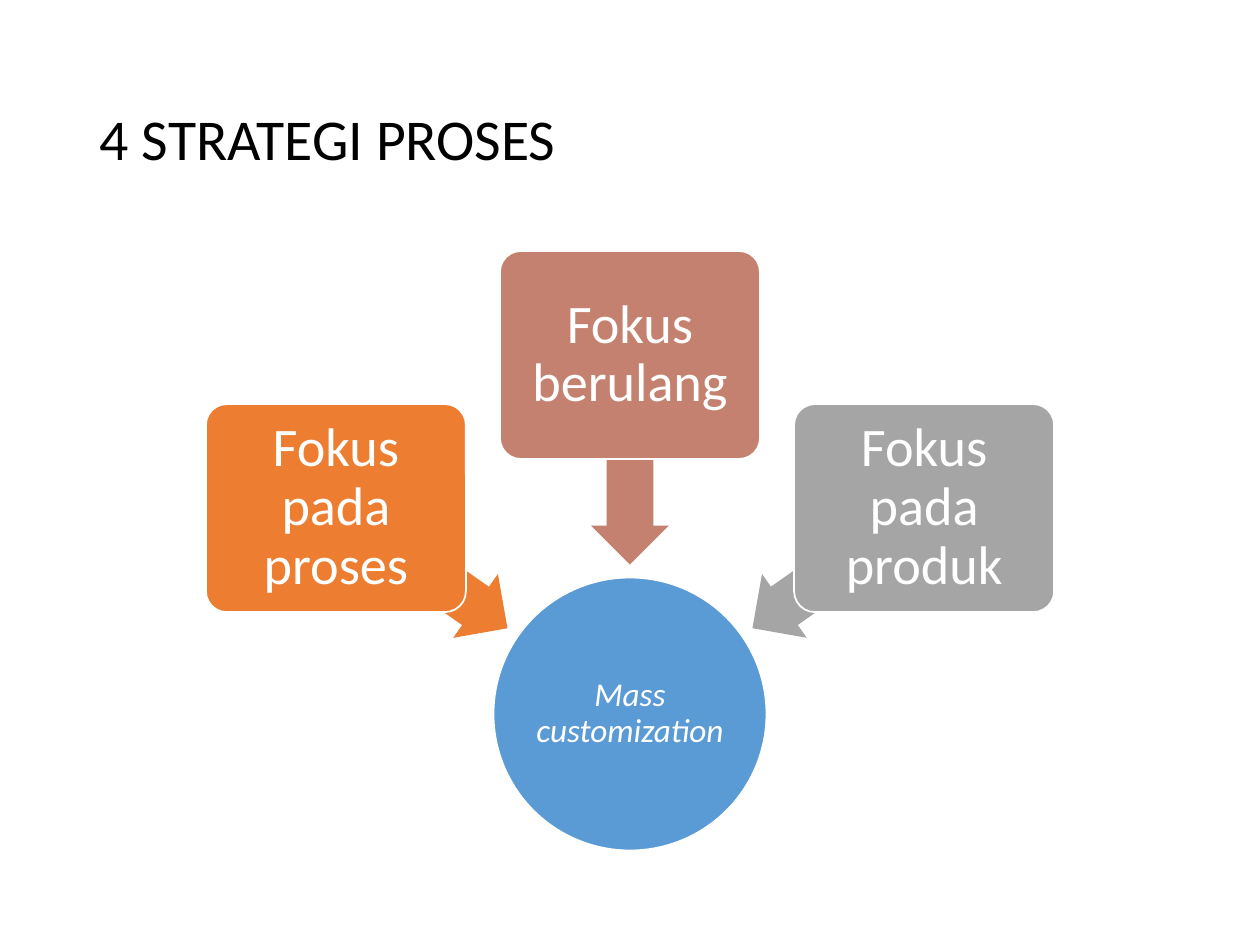
from math import cos, radians, sin

from pptx import Presentation
from pptx.dml.color import RGBColor
from pptx.enum.shapes import MSO_SHAPE
from pptx.enum.text import MSO_ANCHOR, PP_ALIGN
from pptx.util import Pt

BLACK = RGBColor(0x00, 0x00, 0x00)
WHITE = RGBColor(0xFF, 0xFF, 0xFF)
BLUE = RGBColor(0x5B, 0x9B, 0xD5)
ORANGE = RGBColor(0xED, 0x7D, 0x31)
ROSE = RGBColor(0xC4, 0x81, 0x70)
GREY = RGBColor(0xA5, 0xA5, 0xA5)
FONT = "Calibri"

# Content: each focus sits around the hub at an angle, clockwise from the right
TITLE = "4 STRATEGI PROSES"
HUB = "Mass customization"
FOCUSES = [
    ("Fokus pada proses", ORANGE, 215),
    ("Fokus berulang", ROSE, 270),
    ("Fokus pada produk", GREY, 325),
]

# Layout in px
SLIDE_SIZE = (1260, 945)
TITLE_BOX = (87, 50, 1086, 183)
HUB_CENTRE = (630, 714)
HUB_SIZE = (273, 273)
BOX_SIZE = (260, 208)
ARROW_SIZE = (209, 78)
BOX_RADIUS = 359
ARROW_RADIUS = 254


def px(length):
    return round(length * 914400 / 126)


def around_hub(angle, radius):
    x, y = HUB_CENTRE
    return x + radius * cos(radians(angle)), y + radius * sin(radians(angle))


def add_centred(kind, centre, size, colour, adjustments=()):
    (x, y), (width, height) = centre, size
    shape = slide.shapes.add_shape(
        kind, px(x - width / 2), px(y - height / 2), px(width), px(height))
    for index, value in enumerate(adjustments):
        shape.adjustments[index] = value
    shape.shadow.inherit = False
    shape.fill.solid()
    shape.fill.fore_color.rgb = colour
    shape.line.fill.background()
    return shape


def format_text(frame, size, colour, align, italic=None):
    frame.word_wrap = True
    frame.vertical_anchor = MSO_ANCHOR.MIDDLE
    paragraph = frame.paragraphs[0]
    paragraph.alignment = align
    paragraph.line_spacing = 0.9
    font = paragraph.runs[0].font
    font.name, font.size, font.italic = FONT, Pt(size), italic
    font.color.rgb = colour


def add_label(shape, text, size, inset, italic=None):
    shape.line.color.rgb = WHITE
    shape.line.width = Pt(1)
    frame = shape.text_frame
    frame.text = text
    frame.margin_left = frame.margin_right = px(inset)
    frame.margin_top = frame.margin_bottom = px(inset)
    format_text(frame, size, WHITE, PP_ALIGN.CENTER, italic)


presentation = Presentation()
presentation.slide_width, presentation.slide_height = map(px, SLIDE_SIZE)
slide = presentation.slides.add_slide(presentation.slide_layouts[5])

# Title
title = slide.shapes.title
title.left, title.top, title.width, title.height = map(px, TITLE_BOX)
title.text_frame.text = TITLE
format_text(title.text_frame, 33, BLACK, PP_ALIGN.LEFT)

# Hub
hub = add_centred(MSO_SHAPE.OVAL, HUB_CENTRE, HUB_SIZE, BLUE)
add_label(hub, HUB, 19, 1, italic=True)

# Focus boxes, each over the arrow that points from it to the hub
for text, colour, angle in FOCUSES:
    arrow = add_centred(MSO_SHAPE.LEFT_ARROW, around_hub(angle, ARROW_RADIUS),
                        ARROW_SIZE, colour, (0.6, 0.5))
    arrow.rotation = angle
    box = add_centred(MSO_SHAPE.ROUNDED_RECTANGLE, around_hub(angle, BOX_RADIUS),
                      BOX_SIZE, colour, (0.1,))
    add_label(box, text, 31, 8)

presentation.save("out.pptx")
